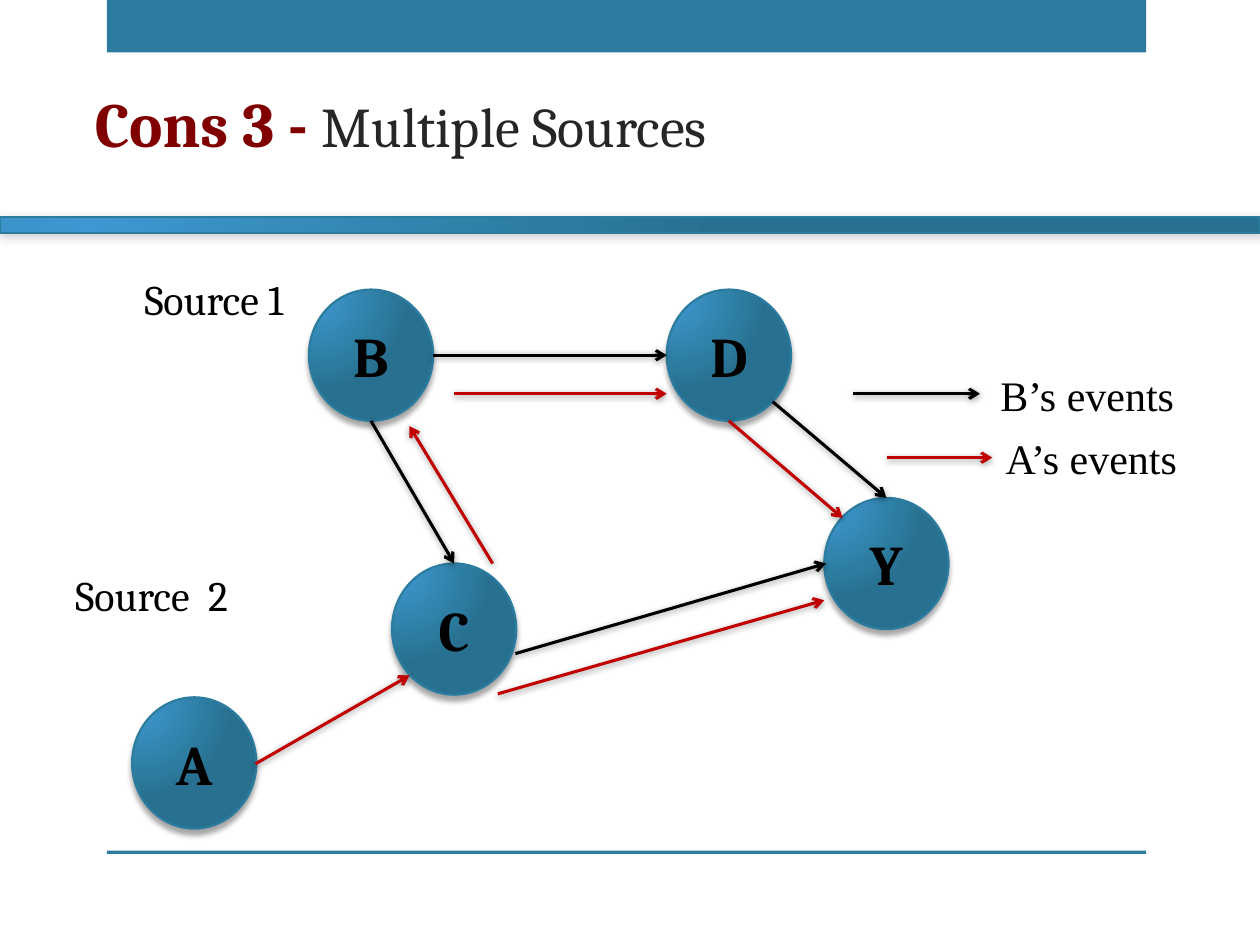
import dataclasses

import pptx
import pptx.dml.color
import pptx.enum.shapes
import pptx.enum.text
import pptx.oxml
import pptx.oxml.ns
import pptx.util

Pt = pptx.util.Pt
RGB = pptx.dml.color.RGBColor.from_string
SHAPE = pptx.enum.shapes.MSO_SHAPE
ANCHOR = pptx.enum.text.MSO_ANCHOR
ALIGN = pptx.enum.text.PP_ALIGN
NS = pptx.oxml.ns.nsdecls("a")


@dataclasses.dataclass(frozen=True)
class Theme:
    teal: str = "2C7C9F"
    black: str = "000000"
    red: str = "C00000"
    maroon: str = "800000"
    gray: str = "262626"
    stops: tuple = ((0, "3F97D1"), (76, "2C7C9F"), (100, "28708F"))
    serif: str = "Cambria"
    roman: str = "Times New Roman"
    head: int = 36
    large: int = 32
    label: int = 24
    edge: float = 1.25
    arrow: float = 1.75


THEME = Theme()
NODE_W, NODE_H = 71, 75
NODES = {"A": (75.5, 398.5), "B": (176.5, 165.5), "C": (224, 322),
         "D": (381, 165.5), "Y": (471, 284.5)}

# Start x, start y, end x, end y, node whose top the arrow meets
B_EVENTS = [(247.5, 203, 381, 203, None), (441.5, 229.5, 506.5, 284.5, "Y"),
            (212, 240.5, 259.5, 322, "C"), (294.5, 373.5, 472, 322, None),
            (487.5, 225, 560, 225, None)]
A_EVENTS = [(146, 436.5, 234, 386, None), (284.5, 396.5, 471, 343, None),
            (281.5, 322, 234, 243.5, None), (259.5, 225, 381, 225, None),
            (416.5, 240.5, 481.5, 296, None), (507, 261.5, 567, 261.5, None)]

# Text, left, top, width, height, font
LABELS = [("Source 1", 75.5, 152.5, 104.5, 58, THEME.serif),
          ("Source  2", 36, 322, 109.5, 58, THEME.serif),
          ("B’s events", 564.5, 207.5, 114.5, 36, THEME.roman),
          ("A’s events", 567.5, 243.5, 114.5, 36, THEME.roman)]


def put(item, **values):
    for name, value in values.items():
        setattr(item, name, value)


def write(para, text, size, color, face=THEME.serif, bold=False):
    run = para.add_run()
    run.text = text
    put(run.font, name=face, size=Pt(size), bold=bold)
    run.font.color.rgb = RGB(color)


def shade(shape, alpha=0, blur=0, dist=0, angle=0):
    """Give the shape an outer shadow: percent, points, points, degrees."""
    props = shape._element.spPr
    props.append(pptx.oxml.parse_xml(
        f'<a:effectLst {NS}><a:outerShdw blurRad="{Pt(blur)}" dist="{Pt(dist)}" '
        f'dir="{angle * 60000}" rotWithShape="0"><a:srgbClr val="{THEME.black}">'
        f'<a:alpha val="{alpha * 1000}"/></a:srgbClr></a:outerShdw></a:effectLst>'))


def glow(shape):
    """Fill with the round blue gradient and a teal edge."""
    stops = "".join(f'<a:gs pos="{pos * 1000}"><a:srgbClr val="{color}"/></a:gs>'
                    for pos, color in THEME.stops)
    geom = shape._element.spPr.find(pptx.oxml.ns.qn("a:prstGeom"))
    geom.addnext(pptx.oxml.parse_xml(
        f'<a:gradFill {NS} rotWithShape="1"><a:gsLst>{stops}</a:gsLst>'
        '<a:path path="circle"><a:fillToRect l="15000" t="15000" r="100000" '
        'b="100000"/></a:path></a:gradFill>'))
    shape.line.color.rgb = RGB(THEME.teal)
    shape.line.width = Pt(THEME.edge)


def add_shape(slide, kind, *box):
    return slide.shapes.add_shape(kind, *map(Pt, box))


def add_band(slide, *box):
    band = add_shape(slide, SHAPE.RECTANGLE, *box)
    band.shadow.inherit = False
    band.fill.solid()
    band.fill.fore_color.rgb = RGB(THEME.teal)
    band.line.fill.background()


def add_rule(slide, *box):
    rule = add_shape(slide, SHAPE.RECTANGLE, *box)
    glow(rule)
    shade(rule, 20, 6, 1, 45)


def add_node(slide, name, left, top):
    node = add_shape(slide, SHAPE.OVAL, left, top, NODE_W, NODE_H)
    glow(node)
    shade(node, 35, 3, 3, 90)
    node.text_frame.vertical_anchor = ANCHOR.MIDDLE
    para = node.text_frame.paragraphs[0]
    para.alignment = ALIGN.CENTER
    write(para, name, THEME.large, THEME.black, bold=True)
    return node


def add_arrow(slide, ends, color, node=None):
    kind = pptx.enum.shapes.MSO_CONNECTOR.STRAIGHT
    arrow = slide.shapes.add_connector(kind, *map(Pt, ends))
    if node is not None:
        arrow.end_connect(node, 0)
    arrow.line.color.rgb = RGB(color)
    arrow.line.width = Pt(THEME.arrow)
    arrow.line._get_or_add_ln().append(
        pptx.oxml.parse_xml(f'<a:tailEnd {NS} type="arrow"/>'))
    shade(arrow, 40, 4, 1, 88)


def add_label(slide, text, left, top, width, height, face):
    box = slide.shapes.add_textbox(*map(Pt, (left, top, width, height)))
    box.text_frame.word_wrap = False
    write(box.text_frame.paragraphs[0], text, THEME.label, THEME.black, face)


def set_title(slide):
    title = slide.shapes.title
    put(title, left=Pt(47), top=Pt(45), width=Pt(557), height=Pt(50))
    put(title.text_frame, vertical_anchor=ANCHOR.BOTTOM, word_wrap=True,
        auto_size=pptx.enum.text.MSO_AUTO_SIZE.NONE)
    para = title.text_frame.paragraphs[0]
    para.alignment = ALIGN.LEFT
    write(para, "Cons 3 - ", THEME.head, THEME.maroon, bold=True)
    write(para, "Multiple Sources", THEME.large, THEME.gray)


def main():
    deck = pptx.Presentation()
    put(deck, slide_width=Pt(720), slide_height=Pt(540))
    slide = deck.slides.add_slide(deck.slide_layouts[5])
    add_band(slide, 61, 0, 594, 30)
    add_band(slide, 61, 486, 594, 2)
    add_rule(slide, 0, 124, 720, 9)
    set_title(slide)
    nodes = {name: add_node(slide, name, *spot) for name, spot in NODES.items()}
    for color, events in ((THEME.black, B_EVENTS), (THEME.red, A_EVENTS)):
        for *ends, goal in events:
            add_arrow(slide, ends, color, nodes.get(goal))
    for label in LABELS:
        add_label(slide, *label)
    deck.save("out.pptx")


if __name__ == "__main__":
    main()
